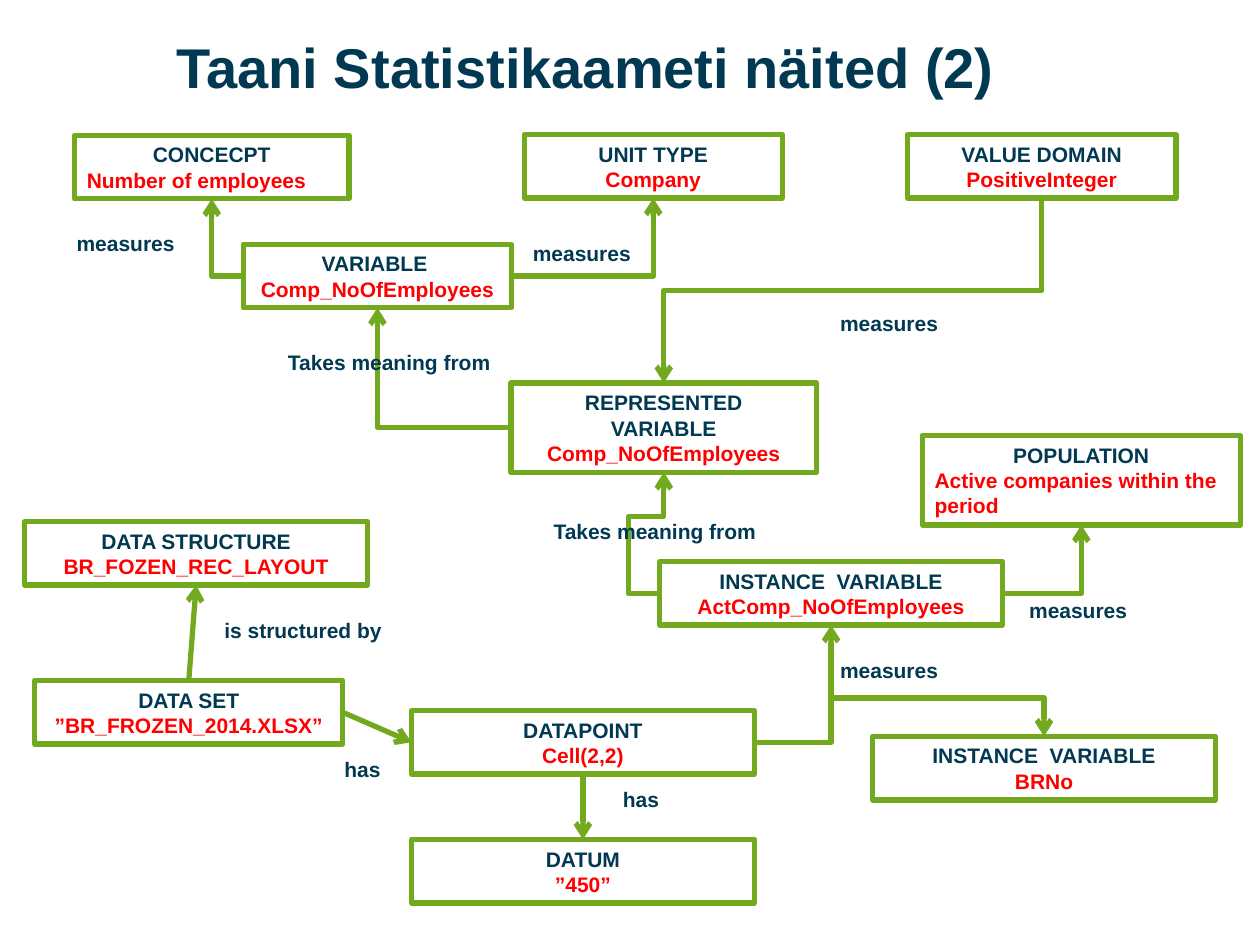
from typing import NamedTuple

from pptx import Presentation
from pptx.dml.color import RGBColor
from pptx.enum import shapes, text
from pptx.oxml.ns import qn
from pptx.util import Pt
from lxml import etree

HUES = {"ink": "003951", "red": "FF0000", "green": "72A91E"}
TOP, LEFT, BOTTOM, RIGHT = range(4)
MID, START, END = text.PP_ALIGN.CENTER, text.PP_ALIGN.LEFT, text.PP_ALIGN.RIGHT
TALL, TALLER = 36.3, 51.1  # heights of two and three lines


class Box(NamedTuple):
    x: float
    y: float
    w: float
    head: str
    value: str
    h: float = TALL
    align: text.PP_ALIGN = MID

    def port(self, side: int) -> tuple[float, float]:
        """Middle of one side."""
        cx, cy = self.x + self.w / 2, self.y + self.h / 2
        return [(cx, self.y), (self.x, cy), (cx, self.y + self.h),
                (self.x + self.w, cy)][side]


class Link(NamedTuple):
    src: str
    out: int
    dst: str
    into: int
    turns: tuple = ()  # x and y values, in turn, where the path bends early


class Label(NamedTuple):
    x: float
    y: float
    w: float
    words: str
    align: text.PP_ALIGN = START


BOXES = {
    "var": Box(139, 139.6, 153.4, "VARIABLE ", "Comp_NoOfEmployees"),
    "rep": Box(292, 218.8, 174.6, "REPRESENTED\nVARIABLE",
               "Comp_NoOfEmployees", TALLER),
    "inst": Box(377, 320.9, 195.8, "INSTANCE  VARIABLE",
                "ActComp_NoOfEmployees"),
    "pop": Box(527, 248.9, 181.8, "POPULATION",
               "Active companies within the period", TALLER, START),
    "dom": Box(518.6, 76.9, 153.4, "VALUE DOMAIN", "PositiveInteger"),
    "unit": Box(299.6, 76.9, 147.4, "UNIT TYPE", "Company"),
    "idea": Box(42.5, 77.3, 157, "CONCECPT", "Number of employees",
                align=START),
    "point": Box(235.2, 406, 195.8, "DATAPOINT", "Cell(2,2)"),
    "datum": Box(235.2, 479.7, 195.8, "DATUM", "”450”"),
    "set": Box(19.9, 388.9, 176, "DATA SET", "”BR_FROZEN_2014.XLSX”"),
    "plan": Box(14.2, 298, 195.8, "DATA STRUCTURE", "BR_FOZEN_REC_LAYOUT"),
    "reg": Box(498.7, 420.8, 195.8, "INSTANCE  VARIABLE", "BRNo"),
}

BENT = [
    Link("rep", LEFT, "var", BOTTOM),
    Link("inst", LEFT, "rep", BOTTOM, (359.1, 295.2)),
    Link("inst", RIGHT, "pop", BOTTOM),
    Link("dom", BOTTOM, "rep", TOP, (166,)),
    Link("var", RIGHT, "unit", BOTTOM),
    Link("var", LEFT, "idea", BOTTOM),
    Link("point", RIGHT, "inst", BOTTOM),
    Link("point", RIGHT, "reg", TOP, (474.5, 398.9)),
]

STRAIGHT = [
    Link("set", RIGHT, "point", LEFT),
    Link("point", BOTTOM, "datum", TOP),
    Link("set", TOP, "plan", BOTTOM),
]

LABELS = [
    Label(218.2, 292.6, 221, "Takes meaning from", END),
    Label(99.4, 196.3, 188, "Takes meaning from", END),
    Label(581, 337.9, 99.4, "measures"),
    Label(473, 173.7, 113, "measures"),
    Label(297.4, 133.7, 113, "measures"),
    Label(36.7, 128, 113, "measures"),
    Label(473, 372.2, 113, "measures"),
    Label(292.3, 445.7, 91.4, "has", END),
    Label(133.2, 428.6, 91.4, "has", END),
    Label(87.8, 349.2, 137.5, "is structured by", END),
]


def hue(name: str) -> RGBColor:
    return RGBColor.from_string(HUES[name])


def write(para, words: str, *, size=12, color="ink", align=MID) -> None:
    para.alignment = align
    run = para.add_run()
    run.text = words
    run.font.name, run.font.size, run.font.bold = "Arial", Pt(size), True
    run.font.color.rgb = hue(color)


def stroke(line) -> None:
    line.width = Pt(3)
    line.color.rgb = hue("green")


def arrow(line) -> None:
    stroke(line)
    ln = line._get_or_add_ln()
    etree.SubElement(ln, qn("a:tailEnd"), type="arrow")


def draw_box(slide, box: Box):
    rect = slide.shapes.add_shape(shapes.MSO_SHAPE.RECTANGLE, Pt(box.x),
                                  Pt(box.y), Pt(box.w), Pt(box.h))
    rect.shadow.inherit = False
    rect.fill.background()
    stroke(rect.line)
    frame = rect.text_frame
    frame.word_wrap = True
    frame.vertical_anchor = text.MSO_ANCHOR.MIDDLE
    heads = box.head.split("\n")
    for i, head in enumerate(heads):
        para = frame.add_paragraph() if i else frame.paragraphs[0]
        write(para, head)
    write(frame.add_paragraph(), box.value, color="red", align=box.align)
    return rect


def draw_bent(slide, link: Link) -> None:
    """Draw a right-angled path that alternates between across and down."""
    start = BOXES[link.src].port(link.out)
    end = BOXES[link.dst].port(link.into)
    across = link.out in (LEFT, RIGHT)
    x, y = start
    path = []
    for turn in link.turns:
        x, y = (turn, y) if across else (x, turn)
        path.append((x, y))
        across = not across
    path += [(end[0], y) if across else (x, end[1]), end]
    pen = slide.shapes.build_freeform(Pt(start[0]), Pt(start[1]))
    pen.add_line_segments([(Pt(a), Pt(b)) for a, b in path], close=False)
    shape = pen.convert_to_shape()
    shape.shadow.inherit = False
    shape.fill.background()
    arrow(shape.line)


def draw_straight(slide, link: Link, rects: dict) -> None:
    line = slide.shapes.add_connector(shapes.MSO_CONNECTOR.STRAIGHT,
                                      0, 0, 0, 0)
    line.begin_connect(rects[link.src], link.out)
    line.end_connect(rects[link.dst], link.into)
    arrow(line.line)
    etree.SubElement(line._element.spPr, qn("a:effectLst"))


def draw_label(slide, label: Label) -> None:
    area = slide.shapes.add_textbox(Pt(label.x), Pt(label.y),
                                    Pt(label.w), Pt(21.8))
    area.text_frame.word_wrap = True
    write(area.text_frame.paragraphs[0], label.words, align=label.align)


def draw_title(slide, words: str) -> None:
    title = slide.shapes.title
    title.left, title.top = Pt(93.6), Pt(15.1)
    title.width, title.height = Pt(485.3), Pt(46.1)
    frame = title.text_frame
    frame.word_wrap = False
    frame.auto_size = text.MSO_AUTO_SIZE.NONE
    frame.vertical_anchor = text.MSO_ANCHOR.TOP
    write(frame.paragraphs[0], words, size=32, align=START)


def main() -> None:
    deck = Presentation()
    deck.slide_width, deck.slide_height = Pt(720), Pt(540)
    slide = deck.slides.add_slide(deck.slide_layouts[5])
    draw_title(slide, "Taani Statistikaameti näited (2)")
    rects = {key: draw_box(slide, box) for key, box in BOXES.items()}
    for link in BENT:
        draw_bent(slide, link)
    for link in STRAIGHT:
        draw_straight(slide, link, rects)
    for label in LABELS:
        draw_label(slide, label)
    deck.save("out.pptx")


if __name__ == "__main__":
    main()
